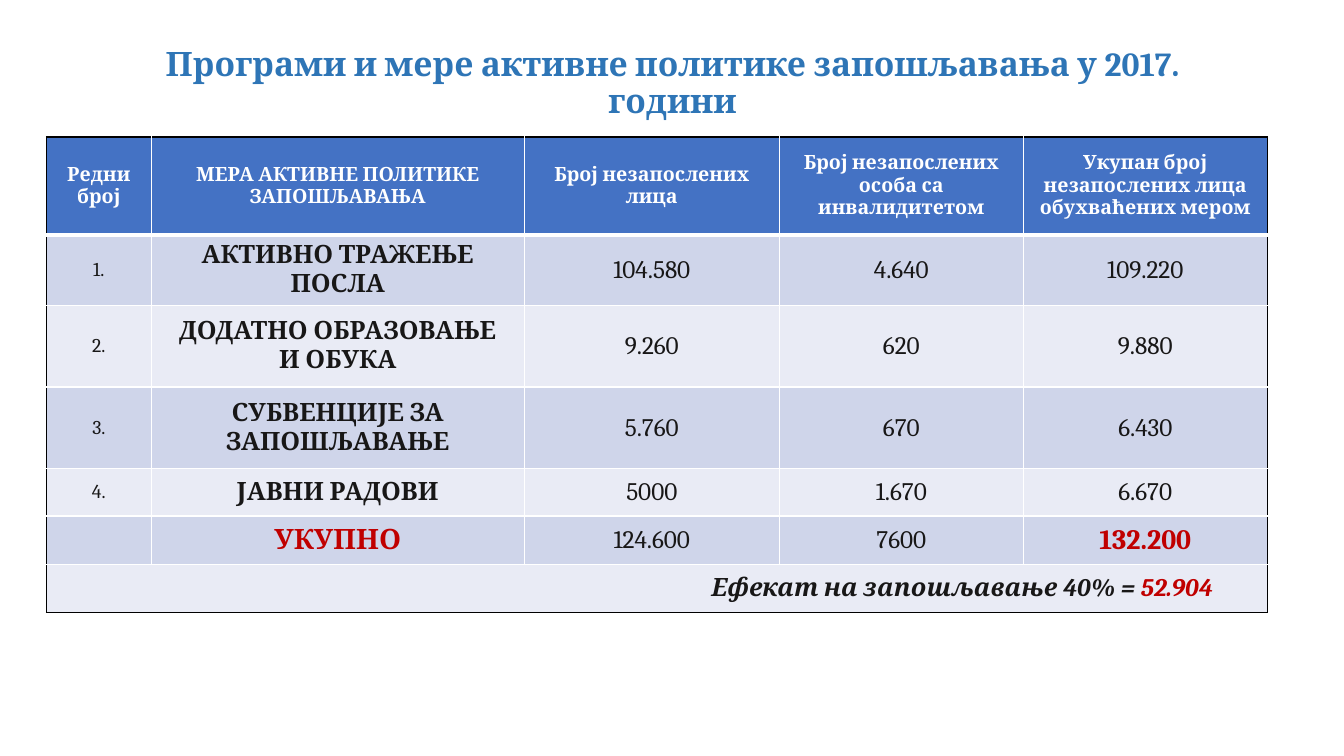
from dataclasses import dataclass

from lxml.etree import fromstring
from pptx import Presentation
from pptx.dml.color import RGBColor
from pptx.enum.text import MSO_ANCHOR, PP_ALIGN
from pptx.util import Inches, Pt


@dataclass(frozen=True)
class Theme:
    """Colours, font and type sizes of the slide."""
    font: str = "Cambria"
    title: str = "2E75B6"
    head: str = "4472C4"
    dark: str = "CFD5EA"
    light: str = "E9EBF5"
    ink: str = "181717"
    red: str = "C00000"
    white: str = "FFFFFF"
    black: str = "000000"
    small: int = 14
    body: int = 18
    total: int = 20
    large: int = 24


@dataclass(frozen=True)
class Style:
    """Look of a run of text."""
    size: int
    color: str
    bold: bool = False
    italic: bool = False


THEME = Theme()
HEAD = Style(THEME.small, THEME.white, True)
INDEX = Style(THEME.small, THEME.ink)
LABEL = Style(THEME.body, THEME.ink, True)
VALUE = Style(THEME.body, THEME.ink)
TOTAL = Style(THEME.total, THEME.red, True)
NOTE = Style(THEME.body, THEME.ink, True, True)
EFFECT = Style(THEME.body, THEME.red, True, True)

WIDTHS = [1.04, 3.7, 2.53, 2.42, 2.42]
HEIGHTS = [0.97, 0.47, 0.81, 0.81, 0.47, 0.48, 0.48]
HEADERS = [
    "Редни\nброј",
    "МЕРА АКТИВНЕ ПОЛИТИКЕ ЗАПОШЉАВАЊА",
    "Број незапослених лица",
    "Број незапослених особа са инвалидитетом",
    "Укупан број незапослених лица обухваћених мером",
]
MEASURES = [
    ["1.", "АКТИВНО ТРАЖЕЊЕ ПОСЛА", "104.580", "4.640", "109.220"],
    ["2.", "ДОДАТНО ОБРАЗОВАЊЕ\nИ ОБУКА", "9.260", "620", "9.880"],
    ["3.", "СУБВЕНЦИЈЕ ЗА ЗАПОШЉАВАЊЕ", "5.760", "670", "6.430"],
    ["4.", "ЈАВНИ РАДОВИ", "5000", "1.670", "6.670"],
]
SUMS = ["", "УКУПНО", "124.600", "7600", "132.200"]


def add_run(para, text, style):
    """Add one styled run to a paragraph."""
    run = para.add_run()
    run.text = text
    font = run.font
    font.name, font.size = THEME.font, Pt(style.size)
    font.bold, font.italic = style.bold, style.italic
    font.color.rgb = RGBColor.from_string(style.color)


def write(frame, text, style):
    """Write centred lines, one paragraph each."""
    for i, line in enumerate(text.split("\n")):
        para = frame.add_paragraph() if i else frame.paragraphs[0]
        para.alignment = PP_ALIGN.CENTER
        if line:
            add_run(para, line, style)


def add_title(slide):
    """Add the slide heading."""
    box = slide.shapes.add_textbox(Inches(0.92), Inches(0.4), Inches(11.5), Inches(0.87))
    frame = box.text_frame
    frame.word_wrap = True
    frame.vertical_anchor = MSO_ANCHOR.MIDDLE
    write(frame, "Програми и мере активне политике запошљавања у 2017. години",
          Style(THEME.large, THEME.title, True))
    frame.paragraphs[0].line_spacing = 0.9


def set_edges(cell, edges):
    """Draw cell borders from (side, colour, points) in schema order."""
    props = cell._tc.get_or_add_tcPr()
    for i, (side, color, width) in enumerate(edges):
        props.insert(i, fromstring(
            f'<a:ln{side} xmlns:a="http://schemas.openxmlformats.org/drawingml/2006/main" '
            f'w="{Pt(width)}"><a:solidFill><a:srgbClr val="{color}"/></a:solidFill></a:ln{side}>'))


def paint(table):
    """Fill the bands and rule the grid with a black outer edge."""
    end, final = len(WIDTHS) - 1, len(HEIGHTS) - 1
    for r in range(final + 1):
        band = THEME.dark if r % 2 else THEME.light
        for c in range(end + 1):
            cell = table.cell(r, c)
            cell.vertical_anchor = MSO_ANCHOR.MIDDLE
            cell.fill.solid()
            cell.fill.fore_color.rgb = RGBColor.from_string(band if r else THEME.head)
            if cell.is_spanned:
                continue
            outer = {"L": c == 0, "R": c == end or cell.is_merge_origin,
                     "T": r == 0, "B": r == final}
            set_edges(cell, [(side, THEME.black if out else THEME.white,
                              3 if side == "B" and r == 0 else 1)
                             for side, out in outer.items()])


def add_effect(cell):
    """Write the closing line in the merged row."""
    cell.margin_right = Inches(0.54)
    para = cell.text_frame.paragraphs[0]
    para.alignment = PP_ALIGN.RIGHT
    add_run(para, "Ефекат на запошљавање 40% = ", NOTE)
    add_run(para, "52.904", EFFECT)


def add_grid(slide):
    """Add the table of measures."""
    table = slide.shapes.add_table(
        len(HEIGHTS), len(WIDTHS), Inches(0.46), Inches(1.36),
        Inches(sum(WIDTHS)), Inches(sum(HEIGHTS))).table
    for column, width in zip(table.columns, WIDTHS):
        column.width = Inches(width)
    for row, height in zip(table.rows, HEIGHTS):
        row.height = Inches(height)
    final = len(HEIGHTS) - 1
    table.cell(final, 0).merge(table.cell(final, len(WIDTHS) - 1))
    plain = [INDEX, LABEL, VALUE, VALUE, VALUE]
    rows = [(HEADERS, [HEAD] * len(HEADERS))]
    rows += [(texts, plain) for texts in MEASURES]
    rows.append((SUMS, [INDEX, TOTAL, VALUE, VALUE, TOTAL]))
    for r, (texts, styles) in enumerate(rows):
        for c, (text, style) in enumerate(zip(texts, styles)):
            write(table.cell(r, c).text_frame, text, style)
    add_effect(table.cell(final, 0))
    paint(table)


def main():
    """Build and save the slide."""
    deck = Presentation()
    deck.slide_width, deck.slide_height = Inches(13.33), Inches(7.5)
    slide = deck.slides.add_slide(deck.slide_layouts[6])
    add_title(slide)
    add_grid(slide)
    deck.save("out.pptx")


if __name__ == "__main__":
    main()
